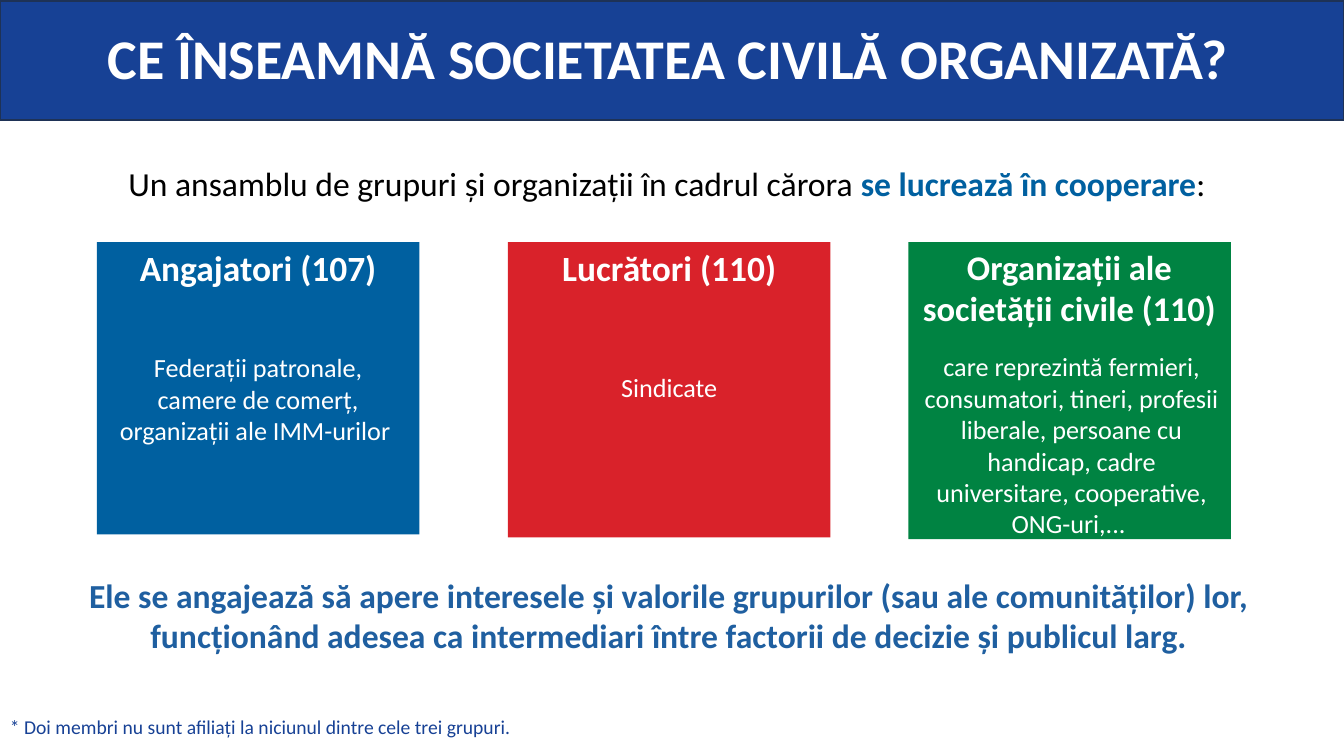
from dataclasses import dataclass

from pptx import Presentation
from pptx.dml.color import RGBColor
from pptx.enum.shapes import MSO_SHAPE
from pptx.enum.text import MSO_ANCHOR, MSO_AUTO_SIZE, PP_ALIGN
from pptx.util import Cm, Pt


@dataclass(frozen=True)
class Theme:
    """Colours, type sizes and font of the slide."""
    font: str = "Calibri"
    band: str = "174195"
    band_line: str = "1E3256"
    blue: str = "0060A0"
    red: str = "D9222A"
    green: str = "008342"
    statement: str = "1F5FA0"
    white: str = "FFFFFF"
    black: str = "000000"
    title: float = 40
    body: float = 24
    heading: float = 25.3
    long_heading: float = 24.7
    detail: float = 18.7
    note: float = 14


THEME = Theme()


def write(tf, paragraphs, size, color, bold=False, align=PP_ALIGN.CENTER, spacing=None):
    """Fill a text frame; a run is a string or a (text, colour, bold) tuple."""
    tf.word_wrap = True
    tf.auto_size = MSO_AUTO_SIZE.NONE
    tf.vertical_anchor = MSO_ANCHOR.TOP
    for i, runs in enumerate(paragraphs):
        p = tf.add_paragraph() if i else tf.paragraphs[0]
        p.alignment = align
        if spacing:
            p.line_spacing = spacing
        for run in [runs] if isinstance(runs, str) else runs:
            text, run_color, run_bold = (run, color, bold) if isinstance(run, str) else run
            r = p.add_run()
            r.text = text
            r.font.name = THEME.font
            r.font.size = Pt(size)
            r.font.bold = run_bold
            r.font.color.rgb = RGBColor.from_string(run_color)


class SlideBuilder:
    """Hold the theme and current slide, and add elements to it."""

    def __init__(self, slide, theme):
        """Keep the slide and the theme."""
        self.s = slide
        self.theme = theme

    def rect(self, x, y, w, h, fill, line=None):
        """Add a flat rectangle measured in centimetres."""
        sp = self.s.shapes.add_shape(MSO_SHAPE.RECTANGLE, Cm(x), Cm(y), Cm(w), Cm(h))
        sp.shadow.inherit = False
        sp.fill.solid()
        sp.fill.fore_color.rgb = RGBColor.from_string(fill)
        if line:
            sp.line.color.rgb = RGBColor.from_string(line)
            sp.line.width = Pt(1)
        else:
            sp.line.fill.background()
        return sp

    def text(self, x, y, w, h, paragraphs, **fmt):
        """Add a text box measured in centimetres."""
        sp = self.s.shapes.add_textbox(Cm(x), Cm(y), Cm(w), Cm(h))
        write(sp.text_frame, paragraphs, **fmt)
        return sp

    def title(self, text):
        """Add the title band and set the title placeholder on top of it."""
        t = self.theme
        band = self.rect(0, 0.03, 33.87, 3, t.band, t.band_line)
        sp = self.s.shapes.title
        sp.left, sp.top, sp.width, sp.height = Cm(-0.23), Cm(0.46), Cm(34.11), Cm(2.97)
        write(sp.text_frame, [text], size=t.title, color=t.white, bold=True)
        band.element.addnext(sp.element)

    def group_card(self, x, h, fill, heading, heading_size, detail, detail_y, detail_w):
        """Add a coloured card with a heading and a description."""
        t = self.theme
        self.rect(x, 6.1, 8.13, h, fill)
        self.text(x, 6.07, 8.13, 1.37, [heading], size=heading_size, color=t.white, bold=True)
        self.text(x, detail_y, detail_w, 3.45, detail, size=t.detail, color=t.white)


def main():
    """Build the slide and save it."""
    prs = Presentation()
    prs.slide_width, prs.slide_height = Cm(33.87), Cm(19.05)
    t = THEME
    b = SlideBuilder(prs.slides.add_slide(prs.slide_layouts[5]), t)

    b.title("CE ÎNSEAMNĂ SOCIETATEA CIVILĂ ORGANIZATĂ?")
    intro = [
        "Un ansamblu de grupuri și organizații în cadrul cărora ",
        ("se lucrează în cooperare", t.blue, True),
        ":",
    ]
    b.text(-0.13, 4.09, 33.87, 1.45, [intro], size=t.body, color=t.black, spacing=0.9)

    groups = [
        (2.44, 7.37, t.blue, "Angajatori (107)", t.heading,
         ["Federații patronale,", "camere de comerț,", "organizații ale IMM-urilor "],
         8.74, 8.13),
        (12.8, 7.44, t.red, "Lucrători (110)", t.heading, ["Sindicate"], 9.22, 8.13),
        (22.89, 7.49, t.green, "Organizații ale societății civile (110)", t.long_heading,
         ["care reprezintă fermieri, consumatori, tineri, profesii liberale, persoane cu "
          "handicap, cadre universitare, cooperative, ONG-uri,... "], 8.71, 8.23),
    ]
    for group in groups:
        b.group_card(*group)

    b.text(0.89, 14.35, 31.93, 4.04,
           ["Ele se angajează să apere interesele și valorile grupurilor (sau ale "
            "comunităților) lor, funcționând adesea ca intermediari între factorii de "
            "decizie și publicul larg."],
           size=t.body, color=t.statement, bold=True)
    b.text(0, 17.88, 23.72, 0.86,
           ["* Doi membri nu sunt afiliați la niciunul dintre cele trei grupuri."],
           size=t.note, color=t.band, align=PP_ALIGN.LEFT)
    prs.save("out.pptx")


if __name__ == "__main__":
    main()
